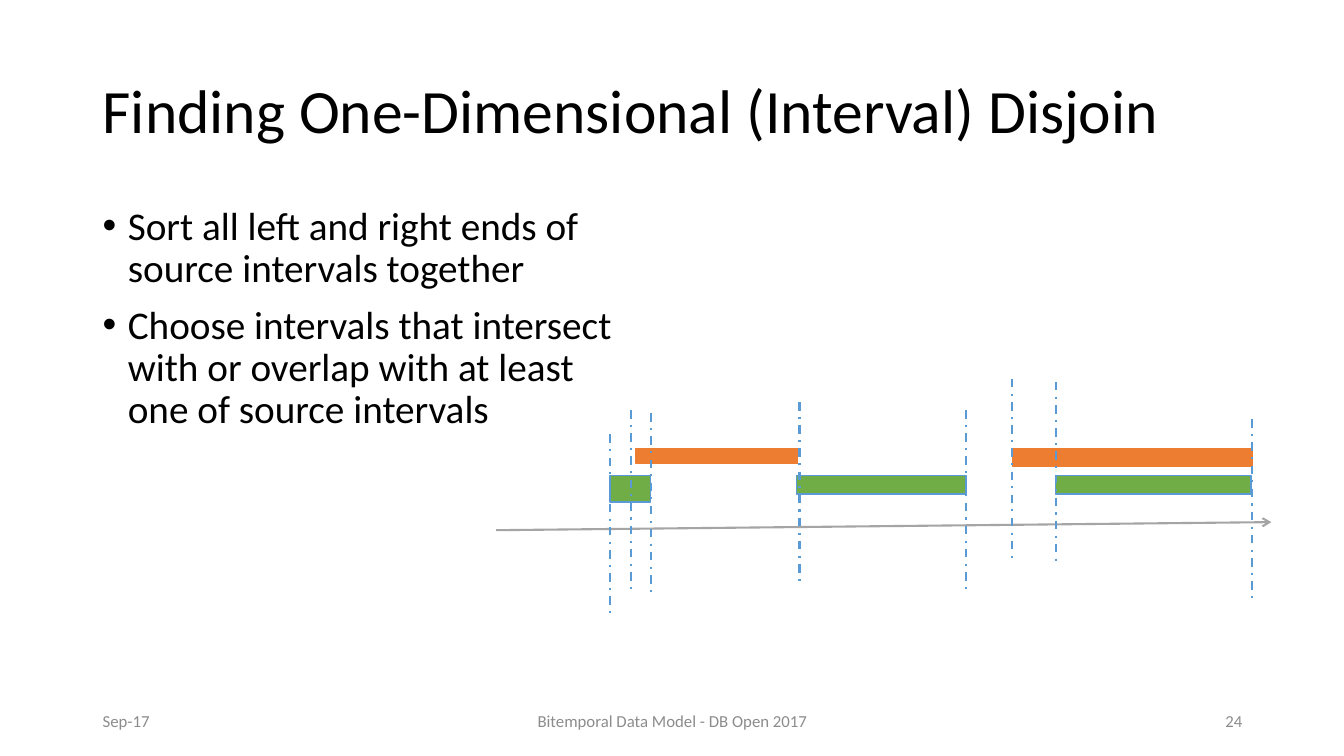
from dataclasses import dataclass

from lxml.etree import SubElement
from pptx import Presentation
from pptx.dml.color import RGBColor as Rgb
from pptx.enum.dml import MSO_LINE_DASH_STYLE as Dash
from pptx.enum.shapes import MSO_CONNECTOR_TYPE as Link, MSO_SHAPE as Form
from pptx.enum.text import MSO_ANCHOR as Anchor, PP_ALIGN as Align
from pptx.oxml.ns import qn
from pptx.util import Inches, Pt

COLORS = {
    "text": "000000", "foot": "8C8C8C", "axis": "A5A5A5",
    "green": "70AD47", "orange": "ED7D31", "blue": "5B9BD5",
}
FONT = "Calibri"
MARK_SPAN = 1.82


@dataclass
class Label:
    text: str
    left: float
    top: float
    width: float
    height: float
    size: int = 12
    color: str = "foot"
    align: Align = Align.LEFT
    space: float = 1.0


@dataclass
class Bar:
    left: float
    top: float
    width: float
    height: float
    fill: str
    edge: str


@dataclass
class Mark:
    x: float
    top: float


LABELS = [
    Label("Finding One-Dimensional (Interval) Disjoin",
          0.92, 0.4, 11.5, 1.45, 44, "text", space=0.9),
    Label("Sep-17", 0.92, 6.95, 3, 0.4),
    Label("Bitemporal Data Model - DB Open 2017", 4.42, 6.95, 4.5, 0.4,
          align=Align.CENTER),
    Label("24", 9.42, 6.95, 3, 0.4, align=Align.RIGHT),
]
POINTS = [
    "Sort all left and right ends of source intervals together",
    "Choose intervals that intersect with or overlap with at least "
    "one of source intervals",
]
BARS = [
    Bar(6.05, 4.72, 0.4, 0.26, "green", "blue"),
    Bar(6.31, 4.45, 1.6, 0.15, "orange", "orange"),
    Bar(7.9, 4.72, 1.68, 0.18, "green", "blue"),
    Bar(10.47, 4.72, 1.94, 0.18, "green", "blue"),
    Bar(10.04, 4.45, 2.38, 0.18, "orange", "orange"),
]
MARKS = [
    Mark(6.05, 4.31), Mark(6.26, 4.07), Mark(6.46, 4.1), Mark(7.93, 3.99),
    Mark(9.58, 4.07), Mark(10.04, 3.76), Mark(10.47, 3.79), Mark(12.42, 4.16),
]


def tint(name: str) -> Rgb:
    return Rgb.from_string(COLORS[name])


def add_frame(slide, left: float, top: float, width: float, height: float):
    box = slide.shapes.add_textbox(
        Inches(left), Inches(top), Inches(width), Inches(height))
    box.text_frame.word_wrap = True
    return box.text_frame


def add_run(para, text: str, size: int, color: str) -> None:
    run = para.add_run()
    run.text = text
    run.font.name = FONT
    run.font.size = Pt(size)
    run.font.color.rgb = tint(color)


def add_label(slide, label: Label) -> None:
    frame = add_frame(slide, label.left, label.top, label.width, label.height)
    frame.vertical_anchor = Anchor.MIDDLE
    para = frame.paragraphs[0]
    para.alignment = label.align
    para.line_spacing = label.space
    add_run(para, label.text, label.size, label.color)


def add_points(slide, points: list[str]) -> None:
    frame = add_frame(slide, 0.92, 2, 5.54, 4.76)
    for i, point in enumerate(points):
        para = frame.add_paragraph() if i else frame.paragraphs[0]
        para.line_spacing = 0.9
        para.space_before = Pt(10)
        props = para._p.get_or_add_pPr()
        props.set("marL", str(Inches(0.25)))
        props.set("indent", str(Inches(-0.25)))
        SubElement(props, qn("a:buFont"), typeface="Arial")
        SubElement(props, qn("a:buChar"), char="•")
        add_run(para, point, 28, "text")


def add_bar(slide, bar: Bar) -> None:
    rect = slide.shapes.add_shape(
        Form.RECTANGLE, Inches(bar.left), Inches(bar.top),
        Inches(bar.width), Inches(bar.height))
    rect.shadow.inherit = False
    rect.fill.solid()
    rect.fill.fore_color.rgb = tint(bar.fill)
    rect.line.color.rgb = tint(bar.edge)
    rect.line.width = Pt(1)


def add_line(slide, x1: float, y1: float, x2: float, y2: float, color: str):
    link = slide.shapes.add_connector(
        Link.STRAIGHT, Inches(x1), Inches(y1), Inches(x2), Inches(y2))
    link.line.color.rgb = tint(color)
    link.line.width = Pt(1.5)
    SubElement(link._element.spPr, qn("a:effectLst"))
    return link.line


def main() -> None:
    deck = Presentation()
    deck.slide_width = Inches(13.33)
    deck.slide_height = Inches(7.5)
    slide = deck.slides.add_slide(deck.slide_layouts[6])

    # Title, footer and bullets
    for label in LABELS:
        add_label(slide, label)
    add_points(slide, POINTS)

    # Time axis
    axis = add_line(slide, 4.92, 5.26, 12.61, 5.18, "axis")
    SubElement(axis._get_or_add_ln(), qn("a:tailEnd"), type="arrow")

    # Source intervals
    for bar in BARS:
        add_bar(slide, bar)

    # Interval ends
    for mark in MARKS:
        line = add_line(slide, mark.x, mark.top,
                        mark.x, mark.top + MARK_SPAN, "blue")
        line.dash_style = Dash.DASH_DOT

    deck.save("out.pptx")


if __name__ == "__main__":
    main()
